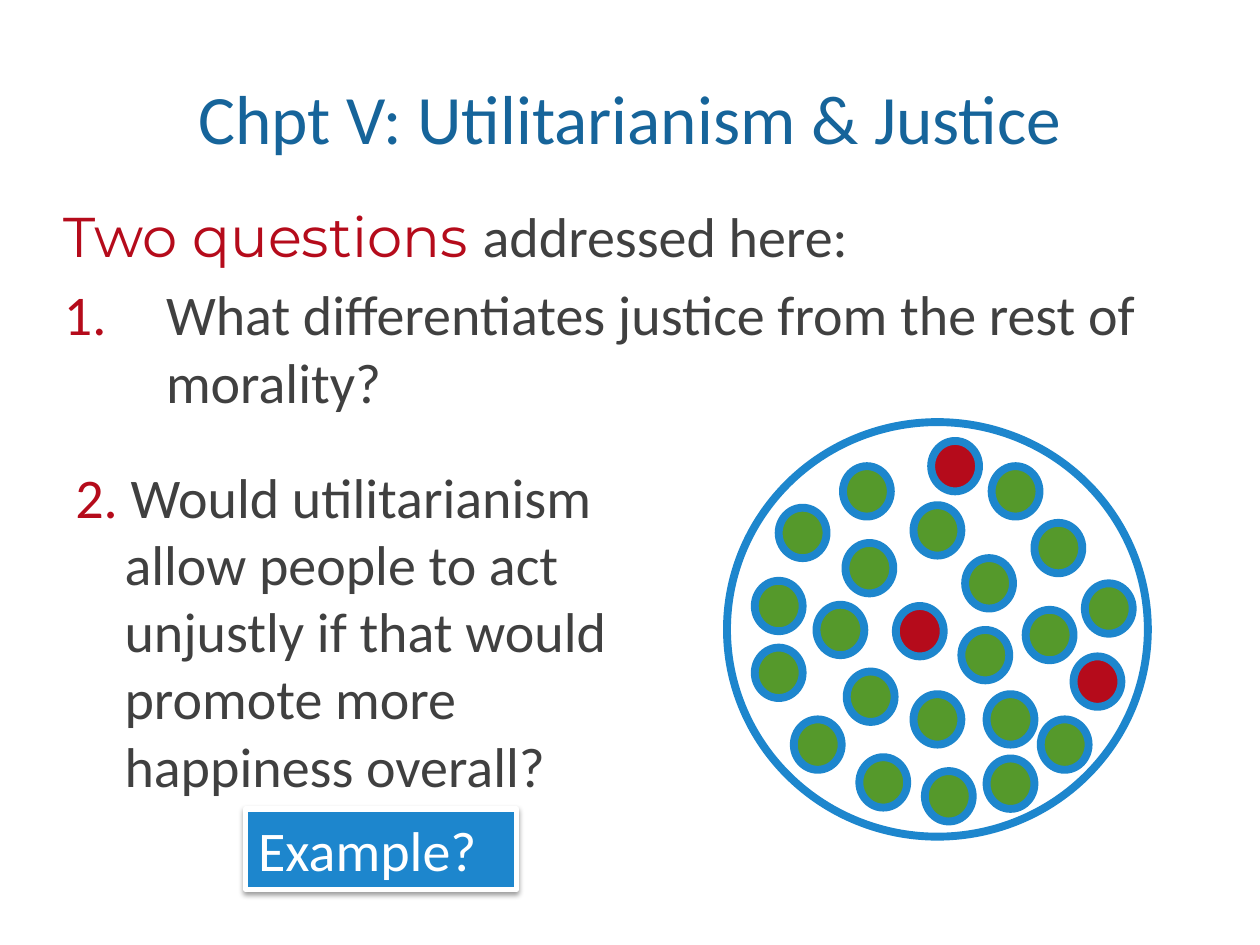
from lxml import etree
from pptx import Presentation
from pptx.dml.color import RGBColor
from pptx.enum.shapes import MSO_SHAPE
from pptx.enum.text import MSO_ANCHOR, PP_ALIGN
from pptx.oxml import parse_xml
from pptx.oxml.ns import nsdecls, qn
from pptx.util import Pt

EMU_PER_PX = 9144  # 100 px to the inch
BLUE, DARK_BLUE, GREEN, RED = "1D86CD", "16649A", "55992B", "B50B1B"
GREY, WHITE = "404040", "FFFFFF"

# Left and top of each person, relative to the society circle
GREEN_PEOPLE = [
    (41, 68), (22, 126), (94, 96), (22, 179), (71, 145), (95, 198),
    (148, 66), (92, 35), (148, 216), (186, 165), (284, 128), (244, 80),
    (189, 108), (210, 35), (157, 277), (105, 266), (53, 236), (249, 236),
    (206, 267), (206, 216), (237, 149),
]
RED_PEOPLE = [(134, 146), (162, 15), (275, 186)]


def px(length):
    return int(length * EMU_PER_PX)


def color(hex_string):
    return RGBColor.from_string(hex_string)


def set_font(font, size, hex_string, name="Calibri"):
    font.size = Pt(size)
    font.name = name
    font.color.rgb = color(hex_string)


def add_text_box(slide, box):
    frame = slide.shapes.add_textbox(*map(px, box)).text_frame
    frame.word_wrap = True
    return frame


def add_run(paragraph, text, hex_string, name="Calibri"):
    run = paragraph.add_run()
    run.text = text
    set_font(run.font, 32, hex_string, name)


def set_hanging_indent(paragraph, indent):
    properties = paragraph._p.get_or_add_pPr()
    properties.set("marL", str(px(indent)))
    properties.set("indent", str(-px(indent)))
    return properties


def add_filled_shape(slide, kind, box, fill, line, line_width):
    shape = slide.shapes.add_shape(kind, *map(px, box))
    shape.shadow.inherit = False
    shape.fill.solid()
    shape.fill.fore_color.rgb = color(fill)
    shape.line.color.rgb = color(line)
    shape.line.width = Pt(line_width)
    return shape


def add_title(slide, box):
    frame = add_text_box(slide, box)
    frame.vertical_anchor = MSO_ANCHOR.MIDDLE
    paragraph = frame.paragraphs[0]
    paragraph.text = "Chpt V: Utilitarianism & Justice"
    paragraph.alignment = PP_ALIGN.CENTER
    set_font(paragraph.font, 39.6, DARK_BLUE)


def add_first_question(slide, box):
    frame = add_text_box(slide, box)
    heading = frame.paragraphs[0]
    add_run(heading, "Two questions ", RED, "Montserrat")
    add_run(heading, "addressed here:", GREY)

    question = frame.add_paragraph()
    question.text = "What differentiates justice from the rest of morality?"
    question.space_before = Pt(6.4)
    properties = set_hanging_indent(question, 81)
    bullet_color = etree.SubElement(properties, qn("a:buClr"))
    etree.SubElement(bullet_color, qn("a:srgbClr"), val=RED)
    etree.SubElement(properties, qn("a:buFont"), typeface="+mj-lt")
    etree.SubElement(properties, qn("a:buAutoNum"), type="arabicPeriod")
    set_font(question.font, 32, GREY)


def add_second_question(slide, box):
    paragraph = add_text_box(slide, box).paragraphs[0]
    set_hanging_indent(paragraph, 39)
    add_run(paragraph, "2. ", RED)
    add_run(paragraph, "Would utilitarianism allow people to act unjustly "
            "if that would promote more happiness overall?", GREY)


def add_society(slide, box):
    left, top = box[:2]
    add_filled_shape(slide, MSO_SHAPE.OVAL, box, WHITE, BLUE, 4.5)
    for fill, people in ((GREEN, GREEN_PEOPLE), (RED, RED_PEOPLE)):
        for x, y in people:
            person = (left + x, top + y, 38, 40)
            add_filled_shape(slide, MSO_SHAPE.OVAL, person, fill, BLUE, 4.5)


def add_example_label(slide, box):
    shape = add_filled_shape(slide, MSO_SHAPE.RECTANGLE, box, BLUE, WHITE, 3)
    effects = shape._element.spPr.find(qn("a:effectLst"))
    effects.append(parse_xml(
        f'<a:outerShdw {nsdecls("a")} blurRad="40000" dist="20000" '
        'dir="5400000" rotWithShape="0"><a:srgbClr val="000000">'
        '<a:alpha val="38000"/></a:srgbClr></a:outerShdw>'))
    frame = shape.text_frame
    frame.word_wrap = True
    frame.vertical_anchor = MSO_ANCHOR.TOP
    paragraph = frame.paragraphs[0]
    paragraph.text = "Example?"
    paragraph.alignment = PP_ALIGN.LEFT
    set_font(paragraph.font, 32, WHITE)


def main():
    presentation = Presentation()
    presentation.slide_width = px(1000)
    presentation.slide_height = px(750)
    slide = presentation.slides.add_slide(presentation.slide_layouts[6])

    # Text
    add_title(slide, (50, 30, 900, 125))
    add_first_question(slide, (41, 155, 900, 206))
    add_second_question(slide, (50, 362, 487, 279))

    # Diagram and label
    add_society(slide, (577, 335, 334, 329))
    add_example_label(slide, (195, 642, 215, 64))

    presentation.save("out.pptx")


if __name__ == "__main__":
    main()
